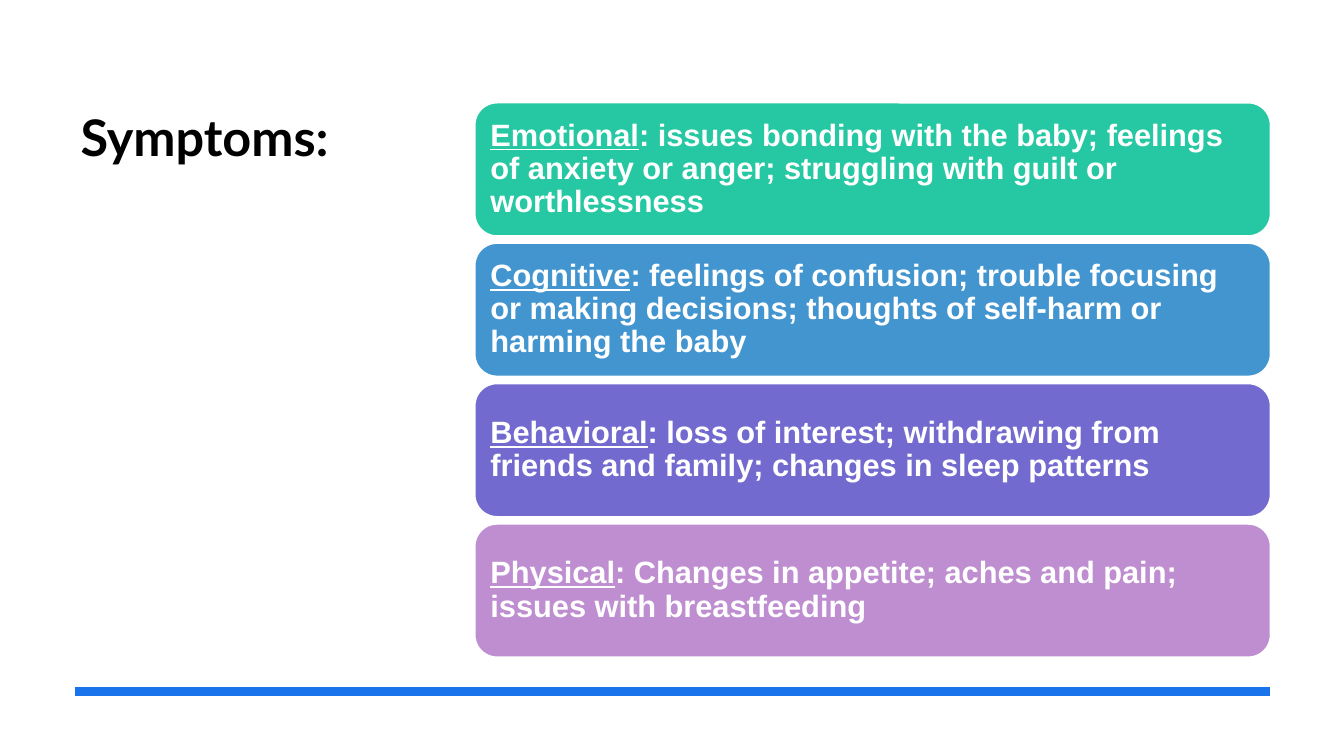
from lxml import etree
from pptx import Presentation
from pptx import util as u
from pptx.dml.color import RGBColor
from pptx.enum import shapes, text
from pptx.oxml.ns import qn


def rgb(value):
    return RGBColor.from_string(value)


class SlideBuilder:
    WHITE, BLACK, ACCENT = "FFFFFF", "000000", "1973EB"
    TITLE_FONT, BODY_FONT = "Lato", "Arial"

    def __init__(self, slide):
        self.s = slide

    def run(self, p, content, font, size, color, underline=False):
        r = p.add_run()
        r.text = content
        r.font.name, r.font.size = font, u.Pt(size)
        r.font.bold, r.font.underline = True, underline
        r.font.color.rgb = rgb(color)

    def title(self, content, left, top, width, height):
        sp = self.s.shapes.add_textbox(
            u.Inches(left), u.Inches(top), u.Inches(width), u.Inches(height))
        tf = sp.text_frame
        tf.word_wrap = True
        self.run(tf.paragraphs[0], content, self.TITLE_FONT, 36, self.BLACK)

    def rule(self, x1, x2, y):
        line = self.s.shapes.add_connector(
            shapes.MSO_CONNECTOR.STRAIGHT,
            u.Inches(x1), u.Inches(y), u.Inches(x2), u.Inches(y))
        line.line.color.rgb = rgb(self.ACCENT)
        line.line.width = u.Pt(6)
        etree.SubElement(line._element.spPr, qn("a:effectLst"))

    def card(self, heading, detail, fill, left, top, width, height):
        sp = self.s.shapes.add_shape(
            shapes.MSO_SHAPE.ROUNDED_RECTANGLE,
            u.Inches(left), u.Inches(top), u.Inches(width), u.Inches(height))
        sp.shadow.inherit = False
        sp.fill.solid()
        sp.fill.fore_color.rgb = rgb(fill)
        sp.line.color.rgb = rgb(self.WHITE)
        sp.line.width = u.Pt(1)
        tf = sp.text_frame
        tf.word_wrap = True
        tf.vertical_anchor = text.MSO_ANCHOR.MIDDLE
        # The rounded corners already add a small inset of their own
        tf.margin_left = tf.margin_right = u.Inches(0.09)
        tf.margin_top = tf.margin_bottom = u.Inches(0.09)
        p = tf.paragraphs[0]
        p.alignment = text.PP_ALIGN.LEFT
        p.line_spacing = 0.9
        self.run(p, heading, self.BODY_FONT, 22, self.WHITE, underline=True)
        self.run(p, ": " + detail, self.BODY_FONT, 22, self.WHITE)


SYMPTOMS = [
    ("Emotional", "issues bonding with the baby; feelings of anxiety or anger; "
     "struggling with guilt or worthlessness", "25C8A2"),
    ("Cognitive", "feelings of confusion; trouble focusing or making decisions; "
     "thoughts of self-harm or harming the baby", "4395D0"),
    ("Behavioral", "loss of interest; withdrawing from friends and family; "
     "changes in sleep patterns", "726ACF"),
    ("Physical", "Changes in appetite; aches and pain; "
     "issues with breastfeeding", "BF8ED1"),
]
CARD_TOP, CARD_HEIGHT, CARD_PITCH = 1.02, 1.32, 1.393


def main():
    prs = Presentation()
    prs.slide_width, prs.slide_height = u.Inches(13.33), u.Inches(7.5)
    b = SlideBuilder(prs.slides.add_slide(prs.slide_layouts[6]))

    # Title and bottom rule
    b.title("Symptoms:", 0.7, 1, 3.28, 4.55)
    b.rule(0.74, 12.6, 6.86)

    # Stack of symptom cards
    for i, (heading, detail, fill) in enumerate(SYMPTOMS):
        b.card(heading, detail, fill,
               4.71, CARD_TOP + i * CARD_PITCH, 7.89, CARD_HEIGHT)

    prs.save("out.pptx")


if __name__ == "__main__":
    main()
